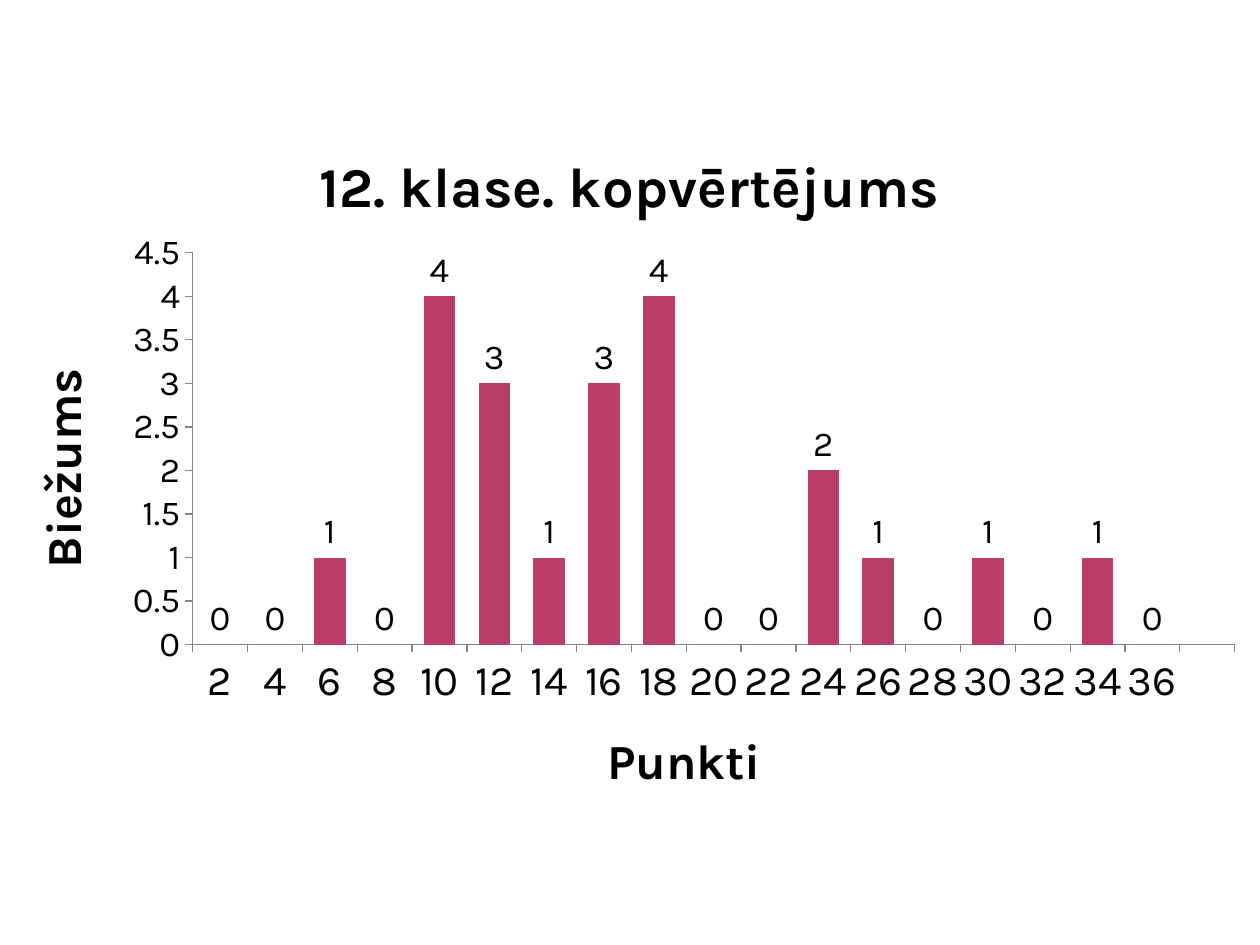
from dataclasses import dataclass

from lxml import etree
from pptx import Presentation
from pptx import util as u
from pptx.chart.data import CategoryChartData
from pptx.dml.color import RGBColor
from pptx.enum import chart as ch
from pptx.oxml.ns import qn


@dataclass(frozen=True)
class Theme:
    font: str = "Karla"
    ink: RGBColor = RGBColor(0, 0, 0)
    axis: RGBColor = RGBColor(0x86, 0x86, 0x86)
    bar: RGBColor = RGBColor(0xB8, 0x3D, 0x68)
    title: int = 32
    axis_title: int = 28
    category: int = 24
    value: int = 20


theme = Theme()


def style(font, size, bold=False):
    font.name = theme.font
    font.size = u.Pt(size)
    font.bold = bold
    font.color.rgb = theme.ink


def set_title(owner, words, size):
    """Give a chart or an axis a bold title."""
    owner.has_title = True
    p = owner.chart_title if hasattr(owner, "chart_title") else owner.axis_title
    p = p.text_frame.paragraphs[0]
    p.text = words
    style(p.font, size, bold=True)


prs = Presentation()
prs.slide_width, prs.slide_height = u.Inches(10), u.Inches(7.5)
s = prs.slides.add_slide(prs.slide_layouts[6])

# Points in steps of two; the last category is unlabelled and empty
data = CategoryChartData()
data.categories = [str(points) for points in range(2, 37, 2)] + [""]
data.add_series("Series 1", [0, 0, 1, 0, 4, 3, 1, 3, 4, 0, 0, 2, 1, 0, 1, 0, 1, 0, None])

chart = s.shapes.add_chart(
    ch.XL_CHART_TYPE.COLUMN_CLUSTERED,
    0, int(prs.slide_height * 0.125), prs.slide_width, int(prs.slide_height * 0.75), data,
).chart
chart.has_legend = False
style(chart.font, 12)
set_title(chart, "12. klase. kopvērtējums", theme.title)
chart.chart_title.include_in_layout = False

for axis, words, size in (
    (chart.category_axis, "Punkti", theme.category),
    (chart.value_axis, "Biežums", theme.value),
):
    set_title(axis, words, theme.axis_title)
    axis.has_major_gridlines = False
    axis.major_tick_mark = ch.XL_TICK_MARK.OUTSIDE
    axis.minor_tick_mark = ch.XL_TICK_MARK.NONE
    axis.format.line.color.rgb = theme.axis
    axis.format.line.width = u.Pt(0.75)
    style(axis.tick_labels.font, size)

chart.category_axis.tick_labels.offset = 100
chart.value_axis.minimum_scale = 0
chart.value_axis.maximum_scale = 4.5
chart.value_axis.major_unit = 0.5
chart.value_axis.tick_labels.number_format = "General"
chart.value_axis.tick_labels.number_format_is_linked = False

plot = chart.plots[0]
plot.gap_width = 74
plot.vary_by_categories = False
fill = plot.series[0].format.fill
fill.solid()
fill.fore_color.rgb = theme.bar
plot.has_data_labels = True
labels = plot.data_labels
labels.show_value = True
labels.position = ch.XL_LABEL_POSITION.OUTSIDE_END
style(labels.font, theme.value)

# Fixed inner plot area, as shares of the chart's size
area = chart.element.find(".//" + qn("c:plotArea"))
for old in area.findall(qn("c:layout")):
    area.remove(old)
layout = etree.Element(qn("c:layout"))
area.insert(0, layout)
manual = etree.SubElement(layout, qn("c:manualLayout"))
for tag, val in (
    ("layoutTarget", "inner"), ("xMode", "edge"), ("yMode", "edge"),
    ("x", 0.153), ("y", 0.19), ("w", 0.827), ("h", 0.553),
):
    etree.SubElement(manual, qn("c:" + tag)).set("val", str(val))

prs.save("out.pptx")
